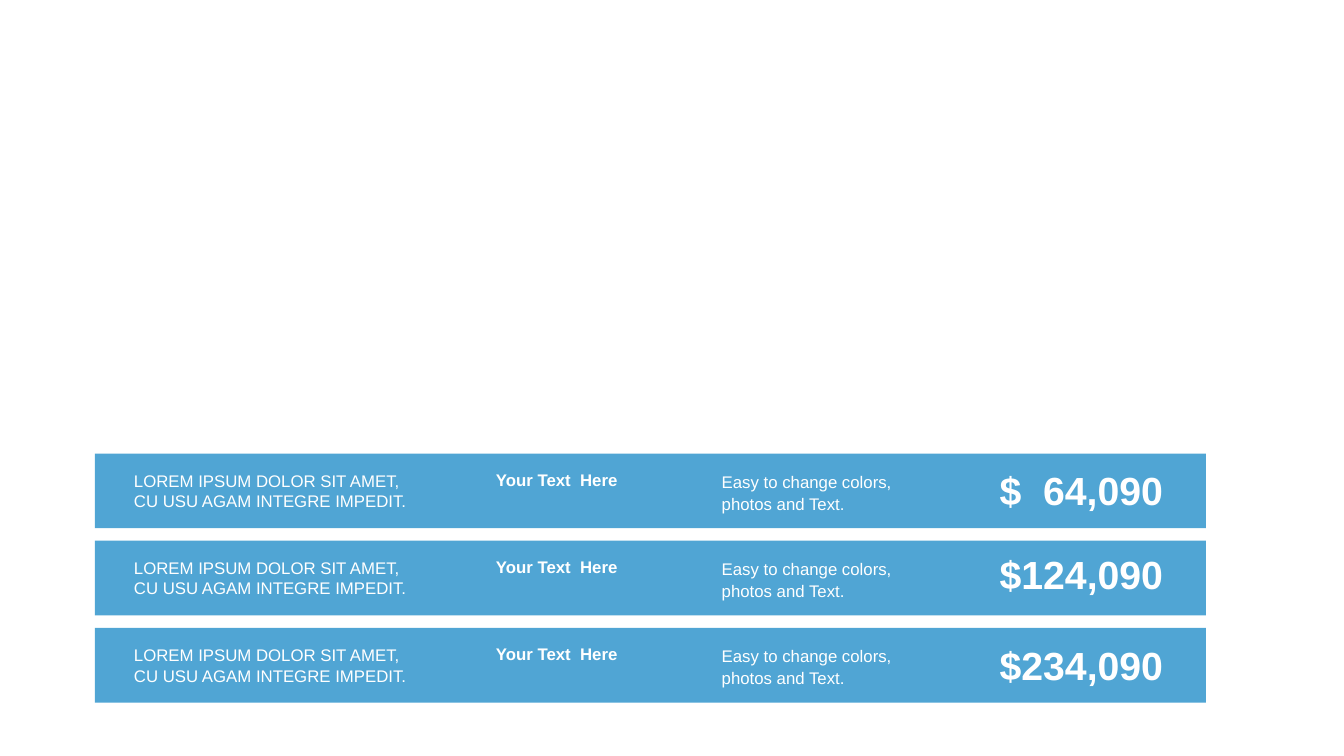
from lxml.etree import SubElement
from pptx import Presentation
from pptx.dml.color import RGBColor
from pptx.enum.shapes import MSO_SHAPE as Shape
from pptx.enum.text import MSO_ANCHOR as Anchor, PP_ALIGN as Align
from pptx.oxml.ns import qn
from pptx.util import Inches, Pt

COLORS = {"band": "0680C3", "text": "FFFFFF"}
BAND_LEFT, BAND_TOP, BAND_WIDTH, BAND_HEIGHT = 0.94, 4.5, 11.02, 0.74
BAND_PITCH = 0.865
BAND_OPACITY = 70
AMOUNTS = [("$  64,090", 0.08), ("$124,090", 0.05), ("$234,090", 0.08)]


def add_text(slide, box, text, size=12, bold=False, align=Align.LEFT,
             anchor=Anchor.TOP, spacing=None):
    """Place formatted text, one paragraph per line, in a box given in inches."""
    shape = slide.shapes.add_textbox(*map(Inches, box))
    frame = shape.text_frame
    frame.word_wrap = True
    frame.vertical_anchor = anchor
    frame.text = text
    for paragraph in frame.paragraphs:
        paragraph.alignment = align
        paragraph.line_spacing = spacing
        font = paragraph.runs[0].font
        font.name, font.size, font.bold = "Arial", Pt(size), bold
        font.color.rgb = RGBColor.from_string(COLORS["text"])


def add_background(slide, box):
    """Draw the translucent rectangle behind one price band."""
    shape = slide.shapes.add_shape(Shape.RECTANGLE, *map(Inches, box))
    shape.shadow.inherit = False
    shape.line.fill.background()
    shape.fill.solid()
    shape.fill.fore_color.rgb = RGBColor.from_string(COLORS["band"])
    color = next(shape.fill._xPr.iter(qn("a:srgbClr")))
    SubElement(color, qn("a:alpha"), val=str(BAND_OPACITY * 1000))


def add_price_band(slide, box, amount, amount_offset):
    """Fill one band with its description, label, note and amount."""
    left, top, _, _ = box
    add_background(slide, box)
    add_text(slide, (left + 0.29, top + 0.12, 3.21, 0.5),
             "LOREM IPSUM DOLOR SIT AMET,\nCU USU AGAM INTEGRE IMPEDIT.",
             anchor=Anchor.MIDDLE)
    add_text(slide, (left + 3.88, top + 0.11, 1.85, 0.3),
             "Your Text  Here", bold=True)
    add_text(slide, (left + 6.12, top + 0.11, 2.31, 0.53),
             "Easy to change colors, photos and Text.", spacing=1.1)
    add_text(slide, (left + 8.82, top + amount_offset, 1.93, 0.57),
             amount, size=28, bold=True, align=Align.CENTER)


def main():
    """Build the slide of stacked price bands and save it."""
    presentation = Presentation()
    presentation.slide_width = Inches(13.33)
    presentation.slide_height = Inches(7.5)
    slide = presentation.slides.add_slide(presentation.slide_layouts[6])
    for row, (amount, amount_offset) in enumerate(AMOUNTS):
        top = BAND_TOP + row * BAND_PITCH
        add_price_band(slide, (BAND_LEFT, top, BAND_WIDTH, BAND_HEIGHT),
                       amount, amount_offset)
    presentation.save("out.pptx")


if __name__ == "__main__":
    main()
